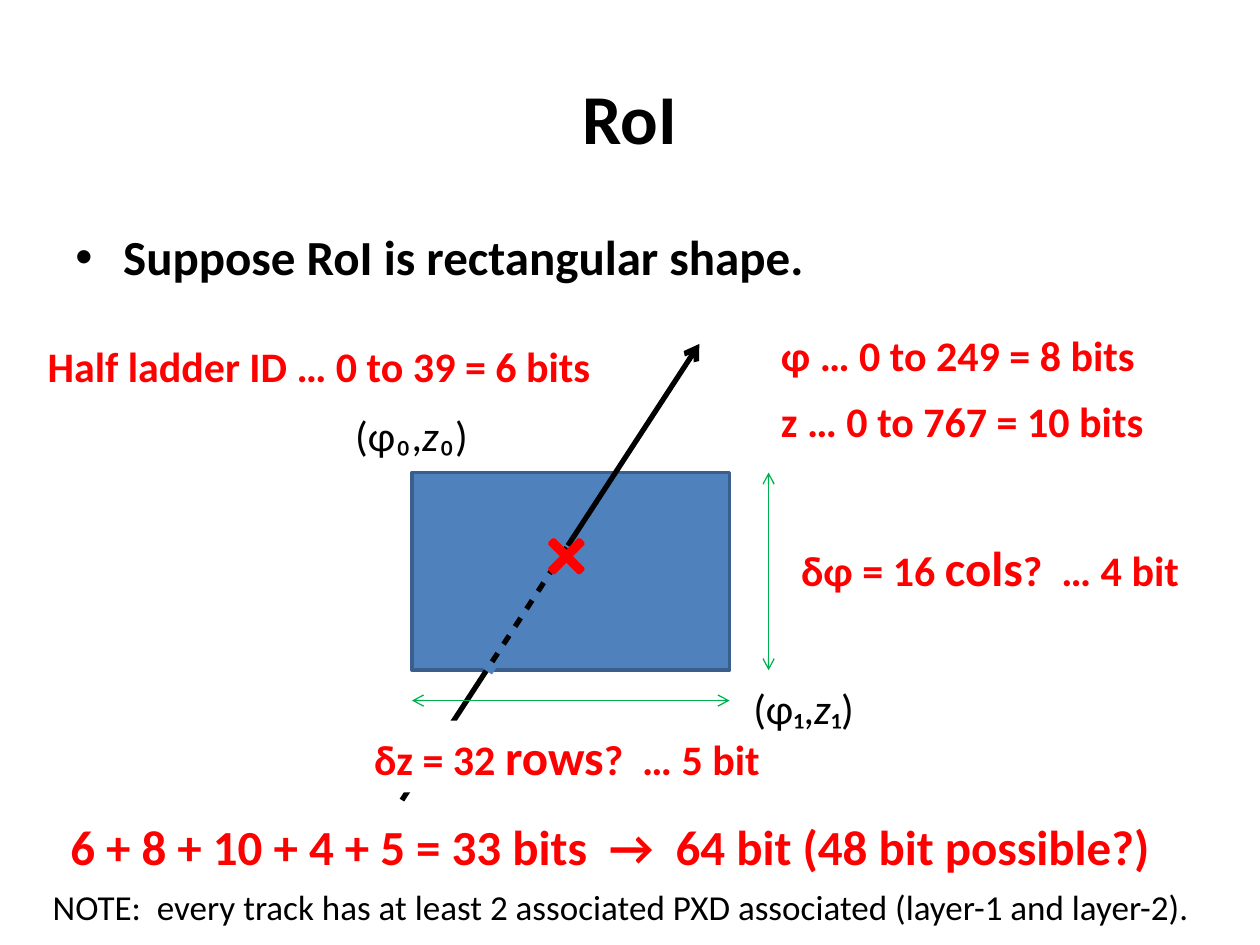
from lxml.etree import SubElement
from pptx import Presentation
from pptx.dml.color import RGBColor
from pptx.enum.dml import MSO_LINE
from pptx.enum.shapes import MSO_CONNECTOR, MSO_SHAPE
from pptx.enum.text import MSO_ANCHOR, MSO_AUTO_SIZE, PP_ALIGN
from pptx.oxml.ns import qn
from pptx.util import Inches, Pt

COLORS = {
    "background": "FFFFFF",
    "text": "000000",
    "accent": "FF0000",
    "region": "4F81BD",
    "region_edge": "3A5F8C",
    "dimension": "00B050",
}
FONT = "Calibri"


def color(name):
    return RGBColor.from_string(COLORS[name])


def add_run(paragraph, text, size, color_name, bold=False, italic=False):
    run = paragraph.add_run()
    run.text = text
    run.font.name = FONT
    run.font.size = Pt(size)
    run.font.bold = bold
    run.font.italic = italic
    run.font.color.rgb = color(color_name)


def add_label(slide, box, runs, color_name="accent", bold=True, filled=False):
    """Place one unwrapped line; each run is (text, size) or (text, size, italic)."""
    bounds = [Inches(value) for value in box]
    if filled:
        shape = slide.shapes.add_shape(MSO_SHAPE.RECTANGLE, *bounds)
        shape.shadow.inherit = False
        shape.fill.solid()
        shape.fill.fore_color.rgb = color("background")
        shape.line.fill.background()
    else:
        shape = slide.shapes.add_textbox(*bounds)
    frame = shape.text_frame
    frame.word_wrap = False
    frame.auto_size = MSO_AUTO_SIZE.SHAPE_TO_FIT_TEXT
    frame.vertical_anchor = MSO_ANCHOR.TOP
    paragraph = frame.paragraphs[0]
    paragraph.alignment = PP_ALIGN.LEFT
    for text, size, *italic in runs:
        add_run(paragraph, text, size, color_name, bold, bool(italic and italic[0]))


def add_line(slide, start, end, color_name, width, arrows=(), dash=None):
    points = [Inches(value) for value in (*start, *end)]
    connector = slide.shapes.add_connector(MSO_CONNECTOR.STRAIGHT, *points)
    connector.line.color.rgb = color(color_name)
    connector.line.width = Pt(width)
    if dash:
        connector.line.dash_style = dash
    line = connector.line._get_or_add_ln()
    for arrow in arrows:
        SubElement(line, qn(f"a:{arrow}"), type="arrow")
    SubElement(connector._element.spPr, qn("a:effectLst"))


def add_solid_shape(slide, kind, box, fill, edge):
    shape = slide.shapes.add_shape(kind, *[Inches(value) for value in box])
    shape.shadow.inherit = False
    shape.fill.solid()
    shape.fill.fore_color.rgb = color(fill)
    shape.line.color.rgb = color(edge)
    shape.line.width = Pt(2)
    return shape


def add_title(slide, box):
    title = slide.shapes.title
    title.left, title.top, title.width, title.height = [Inches(value) for value in box]
    title.text_frame.vertical_anchor = MSO_ANCHOR.MIDDLE
    paragraph = title.text_frame.paragraphs[0]
    paragraph.alignment = PP_ALIGN.CENTER
    add_run(paragraph, "RoI", 40, "text", bold=True)


def add_bullet(slide, box):
    shape = slide.shapes.add_textbox(*[Inches(value) for value in box])
    shape.text_frame.word_wrap = True
    paragraph = shape.text_frame.paragraphs[0]
    paragraph.space_before = Pt(5.6)
    properties = paragraph._p.get_or_add_pPr()
    properties.set("marL", str(Inches(0.38)))
    properties.set("indent", str(-Inches(0.38)))
    SubElement(properties, qn("a:buFont"), typeface="Arial")
    SubElement(properties, qn("a:buChar"), char="•")
    add_run(paragraph, "Suppose RoI is rectangular shape.", 28, "text", bold=True)


def add_region(slide, box):
    """Draw the rectangle with its track, hit, dimensions and corners."""
    left, top, width, height = box
    right, bottom = left + width, top + height
    both_ends = ("headEnd", "tailEnd")
    add_solid_shape(slide, MSO_SHAPE.RECTANGLE, box, "region", "region_edge")

    # Track, with its hidden part dotted, and the hit
    add_line(slide, (left - 0.08, bottom + 1.03), (right - 0.24, top - 1.02),
             "text", 3, ("tailEnd",))
    add_line(slide, (left + 0.6, bottom + 0.01), (left + 1.25, top + 0.59),
             "region", 6, dash=MSO_LINE.ROUND_DOT)
    hit = add_solid_shape(slide, MSO_SHAPE.MATH_MULTIPLY,
                          (left + 1, top + 0.44, 0.45, 0.45), "accent", "accent")
    hit.adjustments[0] = 0.1

    # Height and width
    add_line(slide, (right + 0.31, top), (right + 0.31, bottom),
             "dimension", 0.75, both_ends)
    add_label(slide, (right + 0.47, top + 0.47, 3.22, 0.57),
              [("δφ = 16 ", 24), ("cols", 28), ("?  … 4 bit", 24)])
    add_line(slide, (left, bottom + 0.24), (right, bottom + 0.24),
             "dimension", 0.75, both_ends)
    add_label(slide, (left - 0.4, bottom + 0.4, 3.39, 0.57),
              [("δz = 32 ", 24), ("rows", 28), ("?  … 5 bit", 24)], filled=True)

    # Corner coordinates, in front of the white box of the width label
    corners = [
        ((left - 0.55, top - 0.55, 1.11, 0.5), "₀"),
        ((right + 0.09, bottom + 0.05, 1.01, 0.5), "₁"),
    ]
    for label_box, index in corners:
        runs = [(f"(φ{index},", 24), ("z", 24, True), (f"{index})", 24)]
        add_label(slide, label_box, runs, "text", bold=False)


def add_bit_counts(slide):
    counts = [
        ((0.28, 2.65, 4.55, 0.5), "Half ladder ID … 0 to 39 = 6 bits"),
        ((6.1, 2.57, 3.03, 0.5), "φ … 0 to 249 = 8 bits"),
        ((6.1, 3.09, 3.1, 0.5), "z … 0 to 767 = 10 bits"),
    ]
    for box, text in counts:
        add_label(slide, box, [(text, 24)])


def add_summary(slide):
    total = "6 + 8 + 10 + 4 + 5 = 33 bits  →  64 bit (48 bit possible?)"
    note = ("NOTE:  every track has at least 2 associated PXD associated "
            "(layer-1 and layer-2).")
    add_label(slide, (0.46, 6.43, 9.07, 0.57), [(total, 28)])
    add_label(slide, (0.32, 6.98, 9.33, 0.44), [(note, 20)], "text", bold=False)


def main():
    presentation = Presentation()
    presentation.slide_width = Inches(10)
    presentation.slide_height = Inches(7.5)
    slide = presentation.slides.add_slide(presentation.slide_layouts[5])
    add_title(slide, (0.5, 0.3, 9, 1.25))
    add_bullet(slide, (0.5, 1.75, 9, 4.95))
    add_region(slide, (3.27, 3.75, 2.52, 1.57))
    add_bit_counts(slide)
    add_summary(slide)
    presentation.save("out.pptx")


if __name__ == "__main__":
    main()
